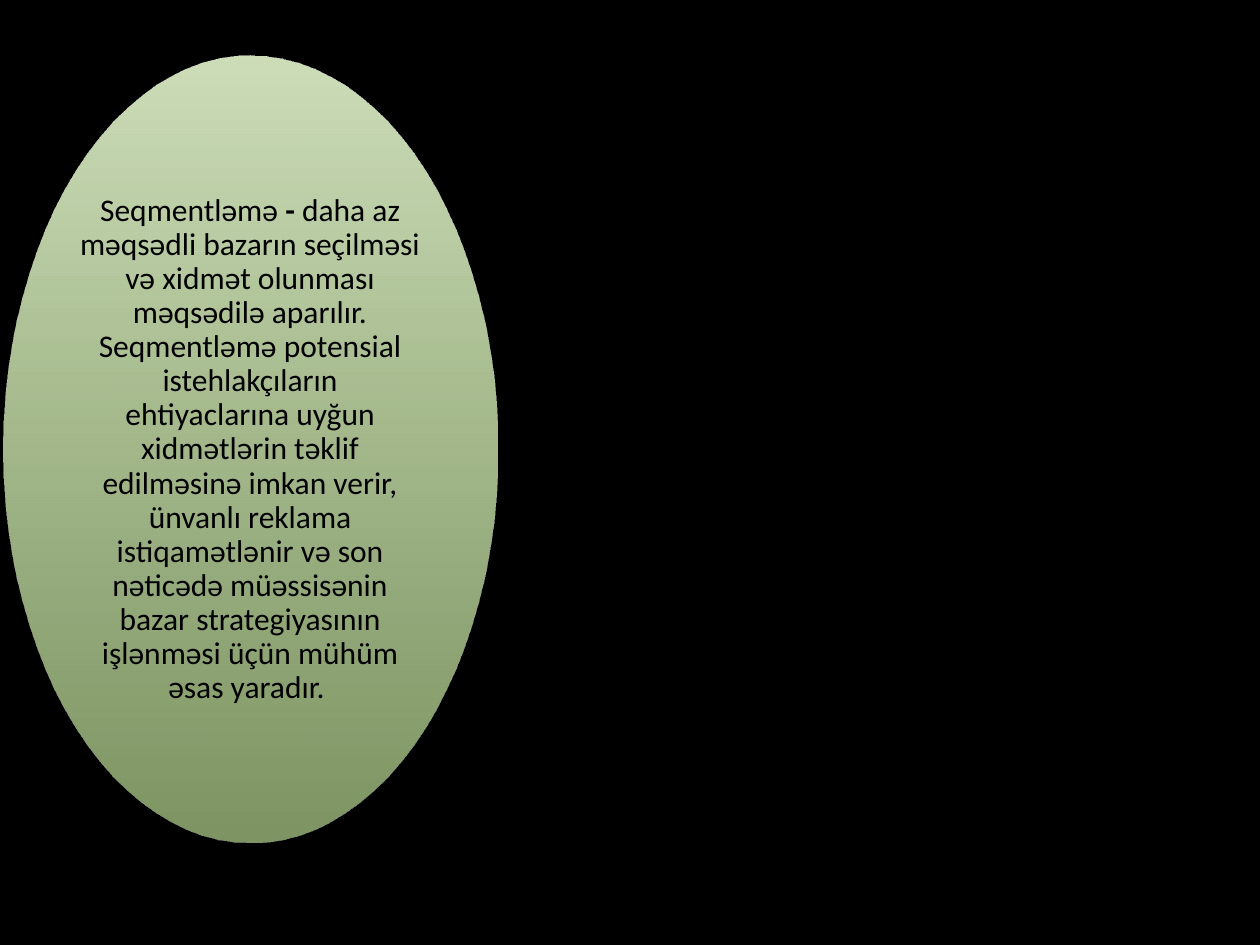
from typing import NamedTuple

from lxml.etree import SubElement
from pptx import Presentation
from pptx.dml.color import RGBColor
from pptx.enum.shapes import MSO_SHAPE as Shape
from pptx.enum.text import MSO_ANCHOR as Anchor, PP_ALIGN as Align
from pptx.oxml.ns import qn
from pptx.util import Inches, Pt

COLORS = {"background": "000000", "text": "000000", "light": "CDDEB9", "dark": "ABC987"}


class Box(NamedTuple):
    left: float
    top: float
    width: float
    height: float


class TextRun(NamedTuple):
    text: str
    bold: bool = False


OVAL = Box(0.003, 0.059, 0.392, 0.833)
DEFINITION = Box(0.06, 0.181, 0.277, 0.59)
DARK_OPACITY = 74
RUNS = [
    TextRun("Seqmentləmə "),
    TextRun("- ", bold=True),
    TextRun(
        "daha az məqsədli bazarın seçilməsi və xidmət olunması məqsədilə aparılır. "
        "Seqmentləmə potensial istehlakçıların ehtiyaclarına uyğun xidmətlərin təklif "
        "edilməsinə imkan verir, ünvanlı reklama istiqamətlənir və son nəticədə "
        "müəssisənin bazar strategiyasının işlənməsi üçün mühüm əsas yaradır. "
    ),
]


def rgb(name: str) -> RGBColor:
    return RGBColor.from_string(COLORS[name])


def place(presentation, box: Box) -> tuple[int, int, int, int]:
    width, height = presentation.slide_width, presentation.slide_height
    return (
        round(box.left * width),
        round(box.top * height),
        round(box.width * width),
        round(box.height * height),
    )


def add_oval(presentation, slide, box: Box) -> None:
    shape = slide.shapes.add_shape(Shape.OVAL, *place(presentation, box))
    shape.shadow.inherit = False
    shape.line.fill.background()
    shape.fill.gradient()
    shape.fill.gradient_angle = 270
    for stop, position, name in zip(shape.fill.gradient_stops, (0, 1), ("light", "dark")):
        stop.position = position
        stop.color.rgb = rgb(name)
    dark_color = list(shape._element.spPr.iter(qn("a:srgbClr")))[-1]
    SubElement(dark_color, qn("a:alpha")).set("val", str(DARK_OPACITY * 1000))


def add_definition(presentation, slide, box: Box, runs: list[TextRun]) -> None:
    frame = slide.shapes.add_textbox(*place(presentation, box)).text_frame
    frame.word_wrap = True
    frame.vertical_anchor = Anchor.MIDDLE
    frame.margin_left = frame.margin_right = Inches(0.03)
    frame.margin_top = frame.margin_bottom = Inches(0.03)
    paragraph = frame.paragraphs[0]
    paragraph.alignment = Align.CENTER
    paragraph.line_spacing = 0.9
    for item in runs:
        run = paragraph.add_run()
        run.text = item.text
        run.font.name = "Calibri"
        run.font.size = Pt(18)
        run.font.bold = item.bold
        run.font.color.rgb = rgb("text")


def main() -> None:
    presentation = Presentation()
    presentation.slide_width = Inches(10)
    presentation.slide_height = Inches(7.5)
    slide = presentation.slides.add_slide(presentation.slide_layouts[6])
    slide.background.fill.solid()
    slide.background.fill.fore_color.rgb = rgb("background")
    add_oval(presentation, slide, OVAL)
    add_definition(presentation, slide, DEFINITION, RUNS)
    presentation.save("out.pptx")


if __name__ == "__main__":
    main()
